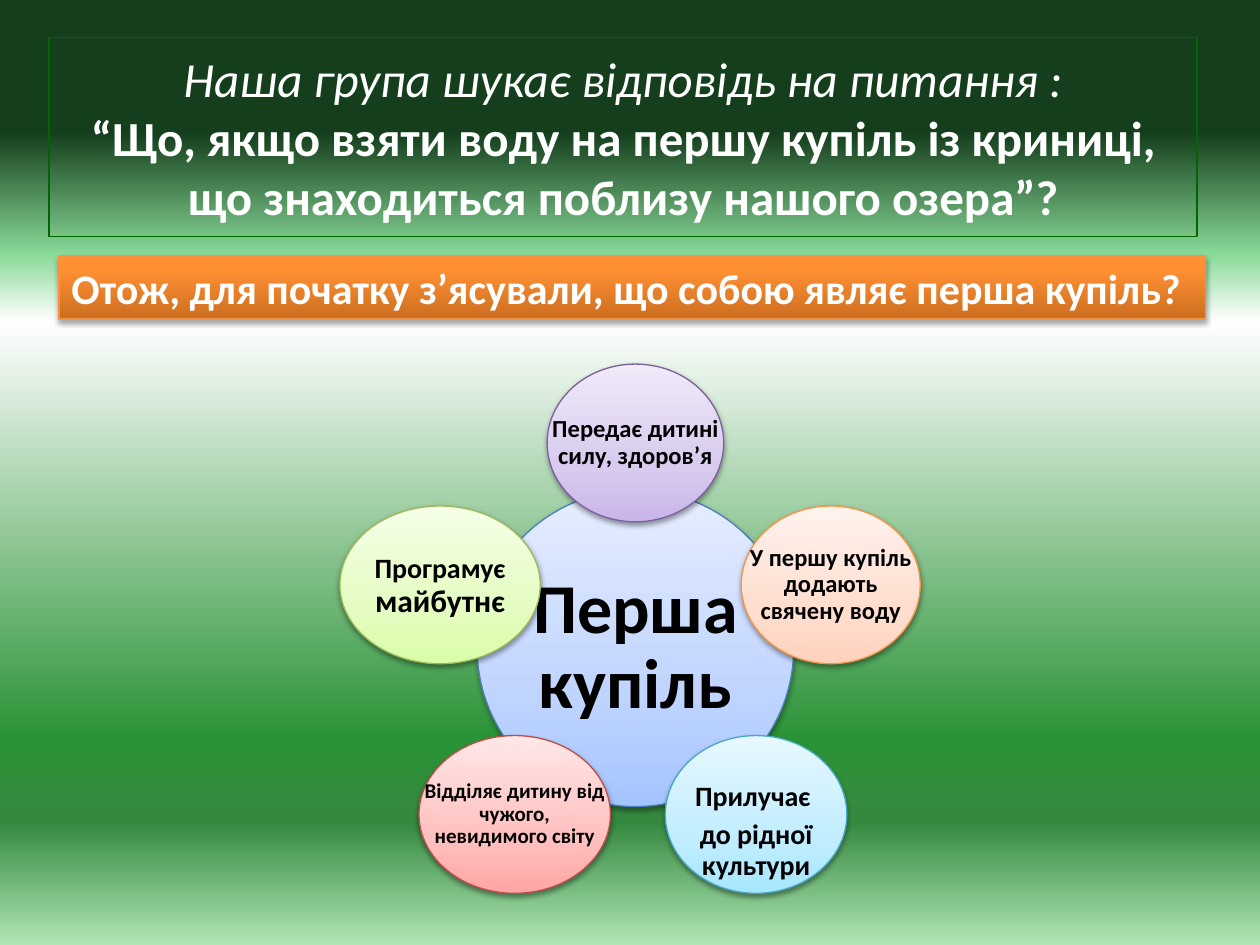
"""Build the slide about the meaning of a child's first bath."""
from dataclasses import dataclass, field
from math import cos, radians, sin
from typing import Any

from lxml import etree
from pptx import Presentation
from pptx.dml.color import RGBColor
from pptx.enum import shapes, text
from pptx.oxml.ns import qn
from pptx.util import Cm, Pt

Stops = tuple[tuple[int, str], ...]
Run = tuple[str, int]


@dataclass(frozen=True)
class Theme:
    font: str = "Calibri"
    light: str = "FFFFFF"
    dark: str = "000000"
    title_line: str = "006600"
    banner_line: str = "F69240"
    title_size: int = 28
    banner_size: int = 24
    core_size: int = 40
    large: int = 18
    medium: int = 16
    normal: int = 14
    small: int = 12
    background: Stops = ((0, "B0E6B6"), (13, "35893F"), (22, "2B9337"),
                         (66, "FFFFFF"), (73, "8ADA99"), (86, "143E1C"))
    banner: Stops = ((0, "CC6E20"), (80, "FF9034"), (100, "FF9136"))
    blue: tuple[str, ...] = ("A4C4FF", "BFD4FF", "E6EEFF", "4B7EBC")
    violet: tuple[str, ...] = ("C9B5E8", "D8CBEE", "F0EAF9", "7D60A0")
    orange: tuple[str, ...] = ("FFD2BD", "FFDED0", "FFF2ED", "F69240")
    cyan: tuple[str, ...] = ("A7E6FF", "C1EDFF", "E7F8FF", "46AAC5")
    red: tuple[str, ...] = ("FFA6A5", "FFC0BF", "FFE7E7", "BF4C48")
    green: tuple[str, ...] = ("DAFDA7", "E4FCC2", "F5FFE7", "98B955")


THEME = Theme()


@dataclass(frozen=True)
class Bubble:
    paragraphs: tuple[tuple[Run, ...], ...]
    colors: tuple[str, ...]
    width: float
    height: float = 3.18
    insets: dict[str, float] = field(default_factory=dict)


CORE = Bubble(((("Перша купіль", THEME.core_size),),), THEME.blue, 6.38, 6.38)
PETALS = (
    Bubble(((("Передає дитині силу, здоров’я", THEME.normal),),), THEME.violet, 3.56),
    Bubble(((("У першу купіль додають свячену воду", THEME.normal),),), THEME.orange, 3.61),
    Bubble(((("Прилучає ", THEME.medium),), (("до рідної культури", THEME.medium),)),
           THEME.cyan, 3.66, insets={"margin_top": 0.74}),
    Bubble(((("Відділяє дитину від чужого, невидимого світу", THEME.small),),), THEME.red, 3.86),
    Bubble(((("Програмує", THEME.medium), (" майбутнє", THEME.large)),), THEME.green, 4.04),
)
CENTER_X, CENTER_Y, RADIUS = 12.81, 13.07, 4.14


def set_values(target: Any, values: dict[str, Any]) -> None:
    """Set each named attribute on the target."""
    for name, value in values.items():
        setattr(target, name, value)


def place(left: float, top: float, width: float, height: float) -> dict[str, Any]:
    """Return position attributes for lengths in centimetres."""
    return {"left": Cm(left), "top": Cm(top), "width": Cm(width), "height": Cm(height)}


def add_run(paragraph: Any, words: str, size: int, color: str, **style: Any) -> None:
    """Append a formatted run to the paragraph."""
    run = paragraph.add_run()
    run.text = words
    set_values(run.font, {"name": THEME.font, "size": Pt(size), **style})
    run.font.color.rgb = RGBColor.from_string(color)


def set_line(shape: Any, color: str) -> None:
    """Give the shape a thin outline."""
    shape.line.color.rgb = RGBColor.from_string(color)
    shape.line.width = Pt(0.75)


def set_gradient(fill: Any, element: Any, stops: Stops) -> None:
    """Fill with a gradient that rises from the bottom edge."""
    fill.gradient()
    fill.gradient_angle = 90
    stop_list = next(element.iter(qn("a:gsLst")))
    for stop in list(stop_list):
        stop_list.remove(stop)
    for position, color in stops:
        stop = etree.SubElement(stop_list, qn("a:gs"), pos=str(position * 1000))
        etree.SubElement(stop, qn("a:srgbClr"), val=color)


def set_shadow(shape: Any, opacity: int, distance: float) -> None:
    """Cast a soft shadow below the shape."""
    shape.shadow.inherit = False
    effects = next(shape.element.iter(qn("a:effectLst")))
    shadow = etree.SubElement(effects, qn("a:outerShdw"), blurRad=str(Pt(3.1)),
                              dist=str(Pt(distance)), dir="5400000", rotWithShape="0")
    color = etree.SubElement(shadow, qn("a:srgbClr"), val=THEME.dark)
    etree.SubElement(color, qn("a:alpha"), val=str(opacity * 1000))


def add_title(slide: Any) -> None:
    """Fill the title placeholder with the question."""
    title = slide.shapes.title
    set_values(title, place(0.99, 0.76, 23.14, 4.01))
    set_line(title, THEME.title_line)
    title.text_frame.vertical_anchor = text.MSO_ANCHOR.MIDDLE
    paragraph = title.text_frame.paragraphs[0]
    paragraph.alignment = text.PP_ALIGN.CENTER
    add_run(paragraph, "Наша група шукає відповідь на питання :",
            THEME.title_size, THEME.light, italic=True)
    paragraph.add_line_break()
    add_run(paragraph, "“Що, якщо взяти воду на першу купіль із криниці, "
            "що знаходиться поблизу нашого озера”?",
            THEME.title_size, THEME.light, bold=True)


def add_banner(slide: Any) -> None:
    """Draw the orange banner under the title."""
    banner = slide.shapes.add_shape(shapes.MSO_SHAPE.RECTANGLE,
                                    **place(1.19, 5.16, 23.11, 1.27))
    set_gradient(banner.fill, banner.element, THEME.banner)
    set_line(banner, THEME.banner_line)
    set_shadow(banner, 35, 1.8)
    set_values(banner.text_frame, {"word_wrap": False,
                                   "auto_size": text.MSO_AUTO_SIZE.SHAPE_TO_FIT_TEXT,
                                   "vertical_anchor": text.MSO_ANCHOR.TOP})
    paragraph = banner.text_frame.paragraphs[0]
    paragraph.alignment = text.PP_ALIGN.LEFT
    add_run(paragraph, "Отож, для початку з’ясували, що собою являє перша купіль?",
            THEME.banner_size, THEME.light, bold=True)


def add_bubble(group: Any, bubble: Bubble, x: float, y: float) -> None:
    """Draw a bubble centred on the point, with its label on top."""
    box = place(x - bubble.width / 2, y - bubble.height / 2, bubble.width, bubble.height)
    oval = group.shapes.add_shape(shapes.MSO_SHAPE.OVAL, **box)
    *shades, outline = bubble.colors
    set_gradient(oval.fill, oval.element, tuple(zip((0, 35, 100), shades)))
    set_line(oval, outline)
    set_shadow(oval, 38, 1.6)

    frame = group.shapes.add_textbox(**box).text_frame
    margins = {f"margin_{side}": 0.05 for side in ("left", "top", "right", "bottom")}
    margins.update(bubble.insets)
    set_values(frame, {name: Cm(value) for name, value in margins.items()})
    set_values(frame, {"word_wrap": True, "vertical_anchor": text.MSO_ANCHOR.MIDDLE})
    for index, runs in enumerate(bubble.paragraphs):
        paragraph = frame.add_paragraph() if index else frame.paragraphs[0]
        set_values(paragraph, {"alignment": text.PP_ALIGN.CENTER, "line_spacing": 0.9})
        if index < len(bubble.paragraphs) - 1:
            paragraph.space_after = Pt(5)
        for words, size in runs:
            add_run(paragraph, words, size, THEME.dark, bold=True)


def main() -> None:
    """Build and save the presentation."""
    presentation = Presentation()
    set_values(presentation, {"slide_width": Cm(25.4), "slide_height": Cm(19.05)})
    slide = presentation.slides.add_slide(presentation.slide_layouts[5])
    set_gradient(slide.background.fill, slide.element, THEME.background)
    add_title(slide)
    add_banner(slide)
    group = slide.shapes.add_group_shape()
    add_bubble(group, CORE, CENTER_X, CENTER_Y)
    for index, petal in enumerate(PETALS):
        angle = radians(index * 360 / len(PETALS))
        add_bubble(group, petal, CENTER_X + RADIUS * sin(angle), CENTER_Y - RADIUS * cos(angle))
    presentation.save("out.pptx")


if __name__ == "__main__":
    main()
